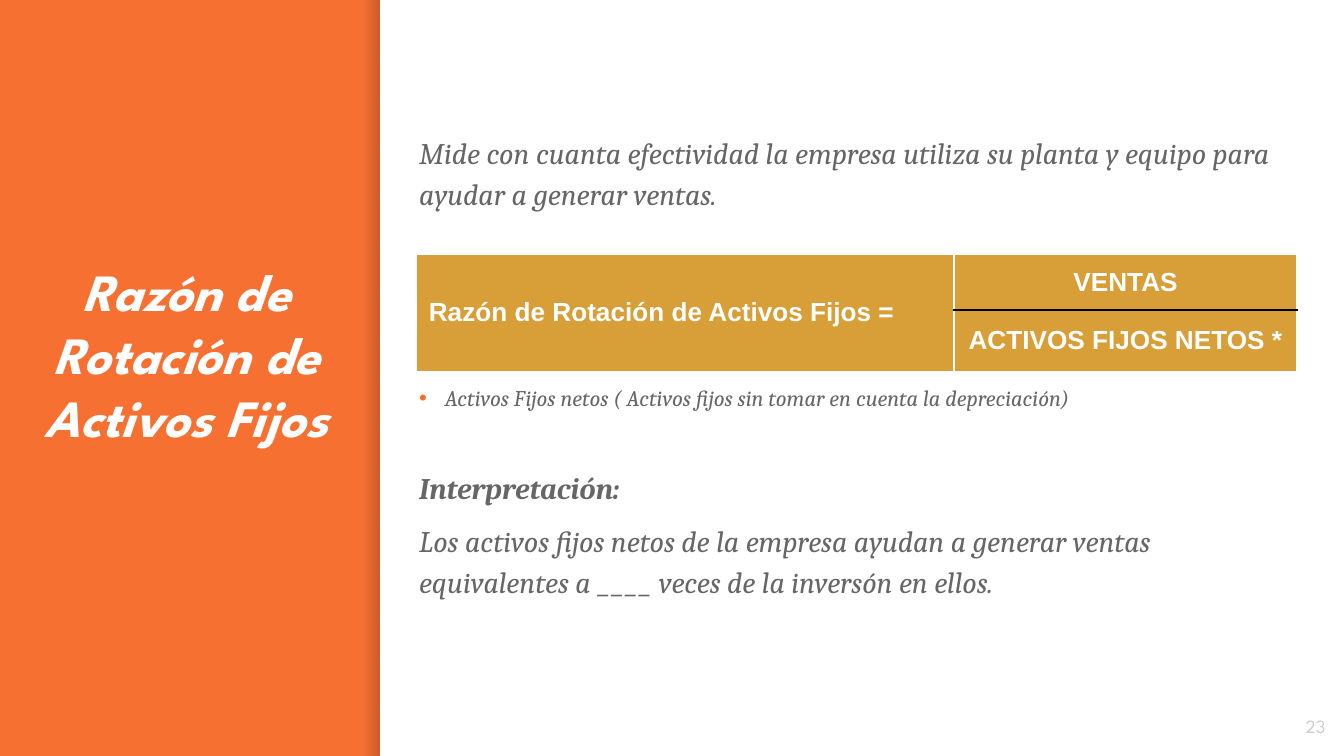
from lxml import etree
from pptx import Presentation
from pptx.dml.color import RGBColor
from pptx.enum.shapes import MSO_SHAPE
from pptx.enum.text import MSO_ANCHOR, MSO_AUTO_SIZE, PP_ALIGN
from pptx.oxml.ns import qn
from pptx.util import Pt

RECTANGLE = MSO_SHAPE.RECTANGLE
TOP, MIDDLE = MSO_ANCHOR.TOP, MSO_ANCHOR.MIDDLE
LEFT, CENTER, RIGHT = PP_ALIGN.LEFT, PP_ALIGN.CENTER, PP_ALIGN.RIGHT
NO_FIT = MSO_AUTO_SIZE.NONE

COLORS = {
    "orange": "F67031",
    "shade": "000014",
    "white": "FFFFFF",
    "gold": "D89F39",
    "text": "666666",
    "number": "CCCCCC",
    "rule": "000000",
}
FRAME = {
    "word_wrap": True, "auto_size": NO_FIT, "vertical_anchor": TOP,
    "margin_left": Pt(7.2), "margin_right": Pt(7.2),
    "margin_top": Pt(7.2), "margin_bottom": Pt(7.2),
}
TITLE_FONT = {"name": "League Spartan", "size": Pt(28), "bold": True, "italic": True}
NUMBER_FONT = {"name": "League Spartan", "size": Pt(10)}
BODY_FONT = {"name": "Cambria", "size": Pt(16), "bold": False, "italic": True}
FORMULA_FONT = {"name": "Arial", "size": Pt(14), "bold": True}

BODY = [
    ("Mide con cuanta efectividad la empresa utiliza su planta y equipo para "
     "ayudar a generar ventas.", 6, {}, False),
    ("Activos Fijos netos ( Activos fijos sin tomar en cuenta la depreciación)",
     90.6, {"size": Pt(12)}, True),
    ("Interpretación:", 28.6, {"bold": True}, False),
    ("Los activos fijos netos de la empresa ayudan a generar ventas "
     "equivalentes a ____ veces de la inversón en ellos.", 6, {}, False),
]


def rgb(color):
    return RGBColor.from_string(COLORS[color])


def apply(target, values):
    for key, value in values.items():
        setattr(target, key, value)


def place(region, box):
    apply(region, dict(zip(("left", "top", "width", "height"), map(Pt, box))))


def write(paragraph, text, font, color, align):
    paragraph.alignment = align
    run = paragraph.add_run()
    run.text = text
    apply(run.font, font)
    run.font.color.rgb = rgb(color)


def set_bullet(paragraph, bulleted):
    properties = paragraph._p.get_or_add_pPr()
    indent = Pt(13.7) if bulleted else 0
    properties.set("marL", str(indent))
    properties.set("indent", str(-indent))
    if bulleted:
        bullet_color = etree.SubElement(properties, qn("a:buClr"))
        etree.SubElement(bullet_color, qn("a:srgbClr"), val=COLORS["orange"])
        etree.SubElement(properties, qn("a:buFont"), typeface="Arial")
        etree.SubElement(properties, qn("a:buChar"), char="•")
    else:
        etree.SubElement(properties, qn("a:buNone"))


def set_rule(cell, side):
    properties = cell._tc.get_or_add_tcPr()
    line = etree.Element(qn(f"a:{side}"), w=str(Pt(1)))
    fill = etree.SubElement(line, qn("a:solidFill"))
    etree.SubElement(fill, qn("a:srgbClr"), val=COLORS["rule"])
    properties.insert(0, line)


def add_panel(slide, box, depth):
    panel = slide.shapes.add_shape(RECTANGLE, *map(Pt, box))
    panel.shadow.inherit = False
    panel.line.fill.background()
    slide.shapes._spTree.insert(depth, panel._element)
    return panel


def add_backdrop(slide, box):
    left, top, width, height = box
    slide.background.fill.solid()
    slide.background.fill.fore_color.rgb = rgb("orange")

    edge = add_panel(slide, (left - 9, top, 9, height), 2)
    edge.fill.gradient()
    edge.fill.gradient_angle = 0
    for stop, position in zip(edge.fill.gradient_stops, (0, 1)):
        stop.position = position
        stop.color.rgb = rgb("shade")
    for shade, opacity in zip(edge._element.spPr.iter(qn("a:srgbClr")), (0, 20000)):
        etree.SubElement(shade, qn("a:alpha"), val=str(opacity))

    page = add_panel(slide, box, 3)
    page.fill.solid()
    page.fill.fore_color.rgb = rgb("white")


def add_title(slide, box):
    title = slide.shapes.title
    place(title, box)
    apply(title.text_frame, FRAME)
    write(title.text_frame.paragraphs[0], "Razón de Rotación de Activos Fijos",
          TITLE_FONT, "white", CENTER)


def add_body(slide, box):
    body = slide.placeholders[1]
    place(body, box)
    frame = body.text_frame
    apply(frame, FRAME)
    for index, (text, gap, font, bulleted) in enumerate(BODY):
        paragraph = frame.add_paragraph() if index else frame.paragraphs[0]
        apply(paragraph, {"line_spacing": 1.15, "space_before": Pt(gap), "space_after": Pt(0)})
        set_bullet(paragraph, bulleted)
        write(paragraph, text, BODY_FONT | font, "text", LEFT)


def add_formula(slide, box):
    table = slide.shapes.add_table(2, 2, *map(Pt, box)).table
    apply(table, {"first_row": False, "horz_banding": False})
    for column, width in zip(table.columns, (288, box[2] - 288)):
        column.width = Pt(width)
    for row, height in zip(table.rows, (30, box[3] - 30)):
        row.height = Pt(height)
    for cell in table.iter_cells():
        cell.vertical_anchor = MIDDLE
        cell.fill.solid()
        cell.fill.fore_color.rgb = rgb("gold")

    ratio, numerator, denominator = table.cell(0, 0), table.cell(0, 1), table.cell(1, 1)
    ratio.merge(table.cell(1, 0))
    apply(ratio, {"margin_left": Pt(4), "margin_right": Pt(32)})
    set_rule(numerator, "lnB")
    set_rule(denominator, "lnT")
    for cell, text, align in (
        (ratio, "Razón de Rotación de Activos Fijos =", RIGHT),
        (numerator, "VENTAS", CENTER),
        (denominator, "ACTIVOS FIJOS NETOS *", CENTER),
    ):
        write(cell.text_frame.paragraphs[0], text, FORMULA_FONT, "white", align)


def add_page_number(slide, box):
    frame = slide.shapes.add_textbox(*map(Pt, box)).text_frame
    apply(frame, FRAME | {"vertical_anchor": MIDDLE})
    write(frame.paragraphs[0], "23", NUMBER_FONT, "number", RIGHT)


def main():
    deck = Presentation()
    apply(deck, {"slide_width": Pt(720), "slide_height": Pt(405)})
    slide = deck.slides.add_slide(deck.slide_layouts[1])
    add_backdrop(slide, (203.6, 0, 516.4, 405))
    add_title(slide, (0, 131.8, 199.4, 134.6))
    add_body(slide, (217.4, 61.9, 483.1, 274.3))
    add_formula(slide, (223.2, 136.1, 471.6, 63))
    add_page_number(slide, (673.9, 373.7, 43.2, 31))
    deck.save("out.pptx")


if __name__ == "__main__":
    main()
